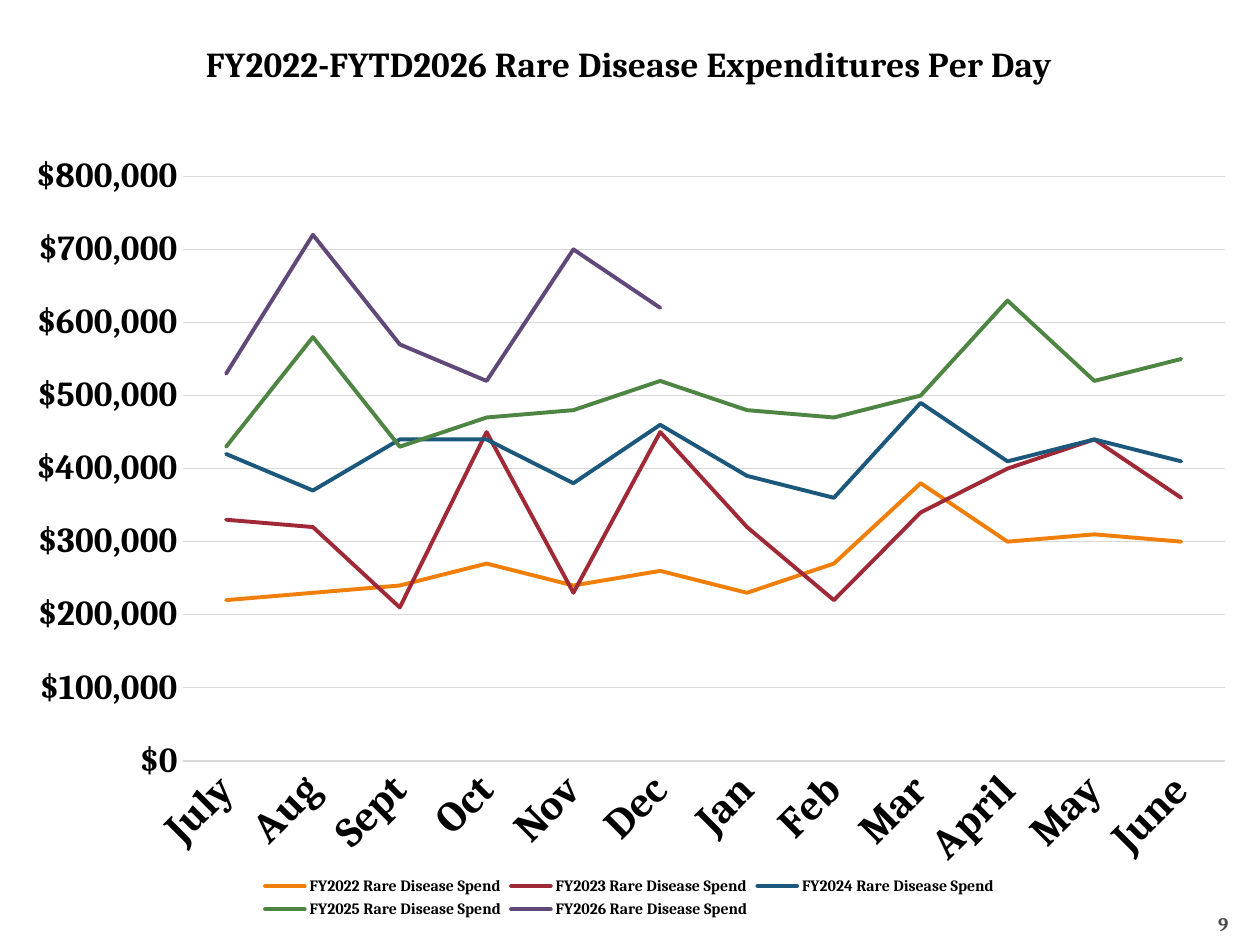
from lxml import etree
from pptx import Presentation
from pptx.chart.data import CategoryChartData
from pptx.dml.color import RGBColor
from pptx.enum.chart import XL_CHART_TYPE, XL_LEGEND_POSITION, XL_MARKER_STYLE, XL_TICK_MARK
from pptx.enum.text import MSO_ANCHOR, PP_ALIGN
from pptx.oxml.ns import qn
from pptx.util import Inches, Pt

TITLE = "FY2022-FYTD2026 Rare Disease Expenditures Per Day"
PAGE_NUMBER = "9"
MONTHS = ["July", "Aug", "Sept", "Oct", "Nov", "Dec",
          "Jan", "Feb", "Mar", "April", "May", "June"]
# Spend per day in thousands of dollars: year, line colour, months
SPEND = [
    ("FY2022", "F07F09", [220, 230, 240, 270, 240, 260, 230, 270, 380, 300, 310, 300]),
    ("FY2023", "9F2936", [330, 320, 210, 450, 230, 450, 320, 220, 340, 400, 440, 360]),
    ("FY2024", "1B587C", [420, 370, 440, 440, 380, 460, 390, 360, 490, 410, 440, 410]),
    ("FY2025", "4E8542", [430, 580, 430, 470, 480, 520, 480, 470, 500, 630, 520, 550]),
    ("FY2026", "604878", [530, 720, 570, 520, 700, 620] + [None] * 6),
]
THEME = {
    "font": "Cambria", "text": "000000", "grid": "D9D9D9", "number": "4D4D4D",
    "title_size": 20, "month_size": 24, "dollar_size": 20,
    "legend_size": 9, "number_size": 11, "line": 2.25, "hairline": 0.75,
}
CHART_BOX = (0.08, 0.08, 9.83, 7.25)
PLOT_BOX = (1.45, 1.4, 8.27, 4.64)
NUMBER_BOX = (9.25, 7.02, 0.5, 0.4)


def style_font(font, size, color=THEME["text"]):
    font.name = THEME["font"]
    font.size = Pt(size)
    font.bold = True
    font.color.rgb = RGBColor.from_string(color)


def style_line(line, color, width):
    line.color.rgb = RGBColor.from_string(color)
    line.width = Pt(width)


def place_plot(chart):
    """Fix the inner plot area, as fractions of the chart box."""
    left, top, width, height = CHART_BOX
    x, y, w, h = PLOT_BOX
    area = chart._chartSpace.chart.plotArea
    for old in area.findall(qn("c:layout")):
        area.remove(old)
    layout = etree.Element(qn("c:layout"))
    area.insert(0, layout)
    manual = etree.SubElement(layout, qn("c:manualLayout"))
    for tag, value in [("layoutTarget", "inner"), ("xMode", "edge"), ("yMode", "edge"),
                       ("x", (x - left) / width), ("y", (y - top) / height),
                       ("w", w / width), ("h", h / height)]:
        etree.SubElement(manual, qn(f"c:{tag}")).set("val", str(value))


def add_spend_chart(slide):
    data = CategoryChartData(number_format='"$"#,##0')
    data.categories = MONTHS
    for year, _, thousands in SPEND:
        data.add_series(f"{year} Rare Disease Spend",
                        [None if v is None else v * 1000 for v in thousands])
    chart = slide.shapes.add_chart(
        XL_CHART_TYPE.LINE, *map(Inches, CHART_BOX), data).chart
    chart.font.name = THEME["font"]

    chart.has_title = True
    p = chart.chart_title.text_frame.paragraphs[0]
    p.text = TITLE
    style_font(p.font, THEME["title_size"])
    chart.chart_title.include_in_layout = False

    chart.has_legend = True
    chart.legend.position = XL_LEGEND_POSITION.BOTTOM
    chart.legend.include_in_layout = False
    style_font(chart.legend.font, THEME["legend_size"])

    months, dollars = chart.category_axis, chart.value_axis
    for axis, size in [(months, THEME["month_size"]), (dollars, THEME["dollar_size"])]:
        axis.major_tick_mark = axis.minor_tick_mark = XL_TICK_MARK.NONE
        style_font(axis.tick_labels.font, size)
    style_line(months.format.line, THEME["grid"], THEME["hairline"])
    months._element.txPr.find(qn("a:bodyPr")).set("rot", str(-45 * 60000))
    dollars.format.line.fill.background()
    style_line(dollars.major_gridlines.format.line, THEME["grid"], THEME["hairline"])
    dollars.minimum_scale, dollars.maximum_scale, dollars.major_unit = 0, 800000, 100000
    dollars.tick_labels.number_format = '"$"#,##0'
    dollars.tick_labels.number_format_is_linked = False

    plot = chart.plots[0]
    plot.vary_by_categories = False
    for series, (_, color, _) in zip(plot.series, SPEND):
        series.smooth = False
        series.marker.style = XL_MARKER_STYLE.NONE
        style_line(series.format.line, color, THEME["line"])
        series.format.line._get_or_add_ln().set("cap", "rnd")
    place_plot(chart)


def add_page_number(slide):
    tf = slide.shapes.add_textbox(*map(Inches, NUMBER_BOX)).text_frame
    tf.word_wrap = True
    tf.vertical_anchor = MSO_ANCHOR.BOTTOM
    tf.margin_left = tf.margin_right = tf.margin_bottom = 0
    p = tf.paragraphs[0]
    p.text = PAGE_NUMBER
    p.alignment = PP_ALIGN.RIGHT
    style_font(p.font, THEME["number_size"], THEME["number"])


def main():
    prs = Presentation()
    prs.slide_width, prs.slide_height = Inches(10), Inches(7.5)
    slide = prs.slides.add_slide(prs.slide_layouts[6])
    add_page_number(slide)
    add_spend_chart(slide)
    prs.save("out.pptx")


if __name__ == "__main__":
    main()
